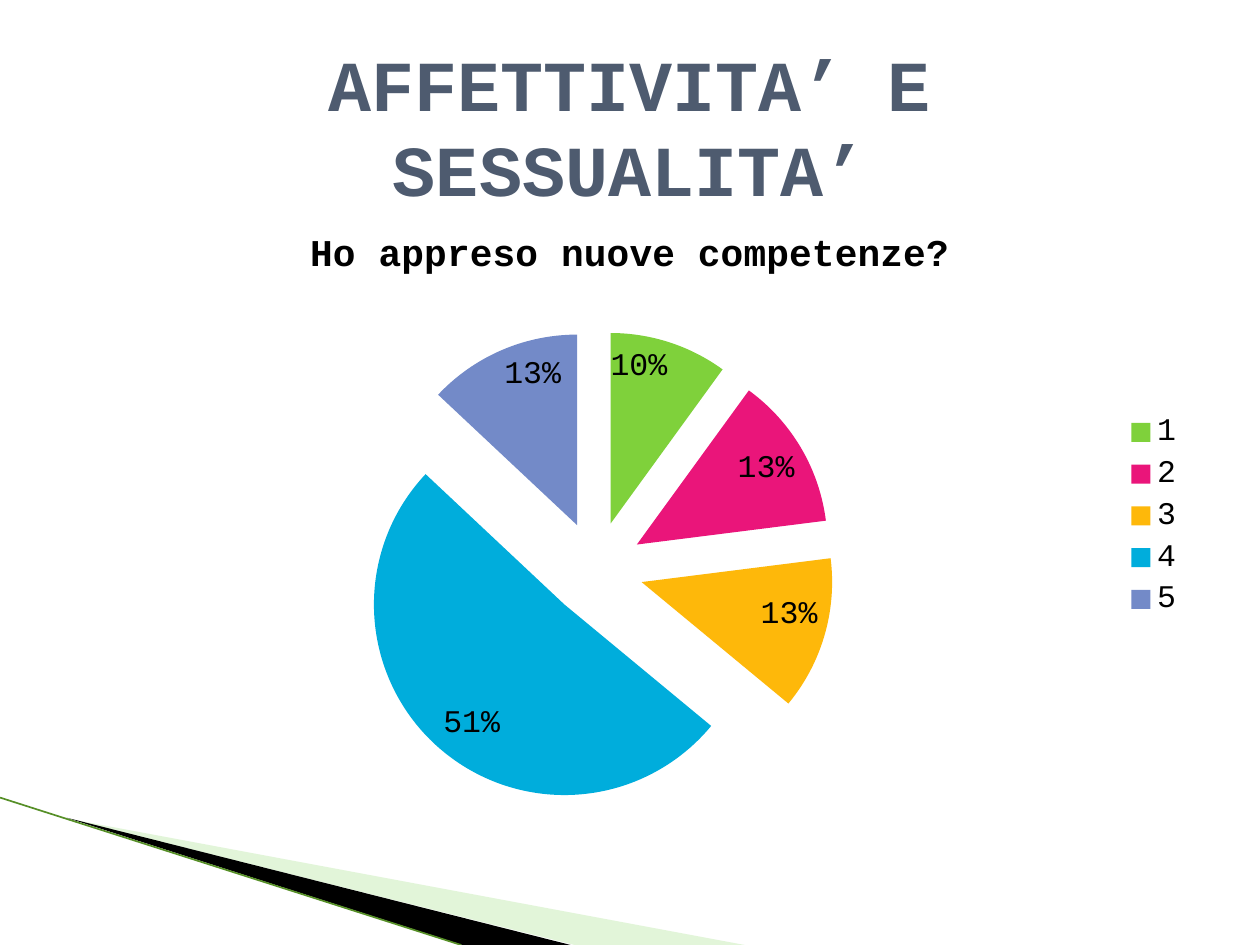
from dataclasses import dataclass

from lxml.etree import SubElement
from pptx import Presentation
from pptx.chart.data import CategoryChartData
from pptx.dml.color import RGBColor
from pptx.enum.chart import XL_CHART_TYPE, XL_LABEL_POSITION, XL_LEGEND_POSITION
from pptx.enum.shapes import MSO_CONNECTOR
from pptx.enum.text import MSO_ANCHOR, PP_ALIGN
from pptx.oxml import parse_xml
from pptx.oxml.ns import nsdecls, qn
from pptx.util import Inches, Pt

FONT = "Courier New"
COLORS = {"title": "4E5B6F", "text": "000000", "pale": "B8E7A1", "dark": "000000", "edge": "568F27"}
QUESTION = "Ho appreso nuove competenze?"


@dataclass
class Slice:
    """One answer in the pie."""
    name: str
    value: int
    color: str


@dataclass
class Wedge:
    """One decorative triangle in the corner."""
    points: list[tuple[float, float]]
    color: str
    alpha: int = 100


SLICES = [
    Slice("1", 10, "7FD13B"),
    Slice("2", 13, "EA157A"),
    Slice("3", 13, "FEB80A"),
    Slice("4", 51, "00ADDC"),
    Slice("5", 13, "738AC8"),
]
WEDGES = [
    Wedge([(0.55, 6.5), (5.91, 7.5), (4.56, 7.5)], COLORS["pale"], 40),
    Wedge([(0.53, 6.49), (4.53, 7.5), (3.67, 7.5)], COLORS["dark"]),
]


def style_font(font, size: float, color: str, bold: bool) -> None:
    """Apply the slide's typeface with the given look."""
    for name, value in {"name": FONT, "size": Pt(size), "bold": bold}.items():
        setattr(font, name, value)
    font.color.rgb = RGBColor.from_string(color)


def draw_wedge(s, wedge: Wedge) -> None:
    """Draw a filled triangle without outline."""
    start, *rest = [(Inches(x), Inches(y)) for x, y in wedge.points]
    builder = s.shapes.build_freeform(*start)
    builder.add_line_segments(rest, close=True)
    sp = builder.convert_to_shape()
    sp.shadow.inherit = False
    sp.fill.solid()
    sp.fill.fore_color.rgb = RGBColor.from_string(wedge.color)
    sp.line.fill.background()
    if wedge.alpha < 100:
        rgb = sp.fill._xPr.find(".//" + qn("a:srgbClr"))
        SubElement(rgb, qn("a:alpha"), val=str(wedge.alpha * 1000))


def draw_edge(s) -> None:
    """Draw the thin green line along the wedges."""
    line = s.shapes.add_connector(
        MSO_CONNECTOR.STRAIGHT, Inches(0), Inches(6.33), Inches(3.66), Inches(7.5))
    line.line.color.rgb = RGBColor.from_string(COLORS["edge"])
    line.line.width = Pt(0.95)
    SubElement(line._element.spPr, qn("a:effectLst"))


def draw_pie(s, slices: list[Slice]) -> None:
    """Draw the exploded pie with its title and legend."""
    data = CategoryChartData()
    data.categories = [item.name for item in slices]
    data.add_series(QUESTION, [item.value for item in slices])
    chart = s.shapes.add_chart(
        XL_CHART_TYPE.PIE, Inches(0.5), Inches(1.62), Inches(9), Inches(4.95), data).chart
    style_font(chart.font, 18, COLORS["text"], False)

    chart.has_title = True
    tf = chart.chart_title.text_frame
    tf.text = QUESTION
    style_font(tf.paragraphs[0].runs[0].font, 21.6, COLORS["text"], True)
    chart.chart_title.include_in_layout = False
    chart.has_legend = True
    chart.legend.position = XL_LEGEND_POSITION.RIGHT
    chart.legend.include_in_layout = False

    plot = chart.plots[0]
    plot.vary_by_categories = True
    series = plot.series[0]
    for i, item in enumerate(slices):
        fmt = series.points[i].format
        fmt.fill.solid()
        fmt.fill.fore_color.rgb = RGBColor.from_string(item.color)
        fmt.line.fill.background()
    explosion = parse_xml(f'<c:explosion {nsdecls("c")} val="25"/>')
    series._element.find(qn("c:dPt")).addprevious(explosion)

    plot.has_data_labels = True
    labels = plot.data_labels
    formats = {"show_percentage": True, "show_value": False, "number_format": "0%",
               "number_format_is_linked": False, "position": XL_LABEL_POSITION.INSIDE_END}
    for name, value in formats.items():
        setattr(labels, name, value)
    style_font(labels.font, 18, COLORS["text"], False)

    area = chart._chartSpace.find(".//" + qn("c:plotArea"))
    for old in area.findall(qn("c:layout")):
        area.remove(old)
    box = {"x": 0.26, "y": 0.2, "w": 0.42, "h": 0.77}
    sizes = "".join(f'<c:{k} val="{v}"/>' for k, v in box.items())
    area.insert(0, parse_xml(
        f'<c:layout {nsdecls("c")}><c:manualLayout><c:layoutTarget val="inner"/>'
        f'<c:xMode val="edge"/><c:yMode val="edge"/>{sizes}</c:manualLayout></c:layout>'))


def draw_title(s, text: str) -> None:
    """Write the centred slide title."""
    sp = s.shapes.add_textbox(Inches(0.5), Inches(0.3), Inches(9), Inches(1.25))
    tf = sp.text_frame
    formats = {"word_wrap": True, "vertical_anchor": MSO_ANCHOR.MIDDLE, "margin_top": Inches(0.19)}
    for name, value in formats.items():
        setattr(tf, name, value)
    p = tf.paragraphs[0]
    p.alignment = PP_ALIGN.CENTER
    p.line_spacing = Pt(49)
    r = p.add_run()
    r.text = text
    style_font(r.font, 41, COLORS["title"], True)


def main() -> None:
    """Build and save the slide."""
    prs = Presentation()
    prs.slide_width, prs.slide_height = Inches(10), Inches(7.5)
    s = prs.slides.add_slide(prs.slide_layouts[6])
    for wedge in WEDGES:
        draw_wedge(s, wedge)
    draw_edge(s)
    draw_pie(s, SLICES)
    draw_title(s, "AFFETTIVITA’ E SESSUALITA’")
    prs.save("out.pptx")


if __name__ == "__main__":
    main()
